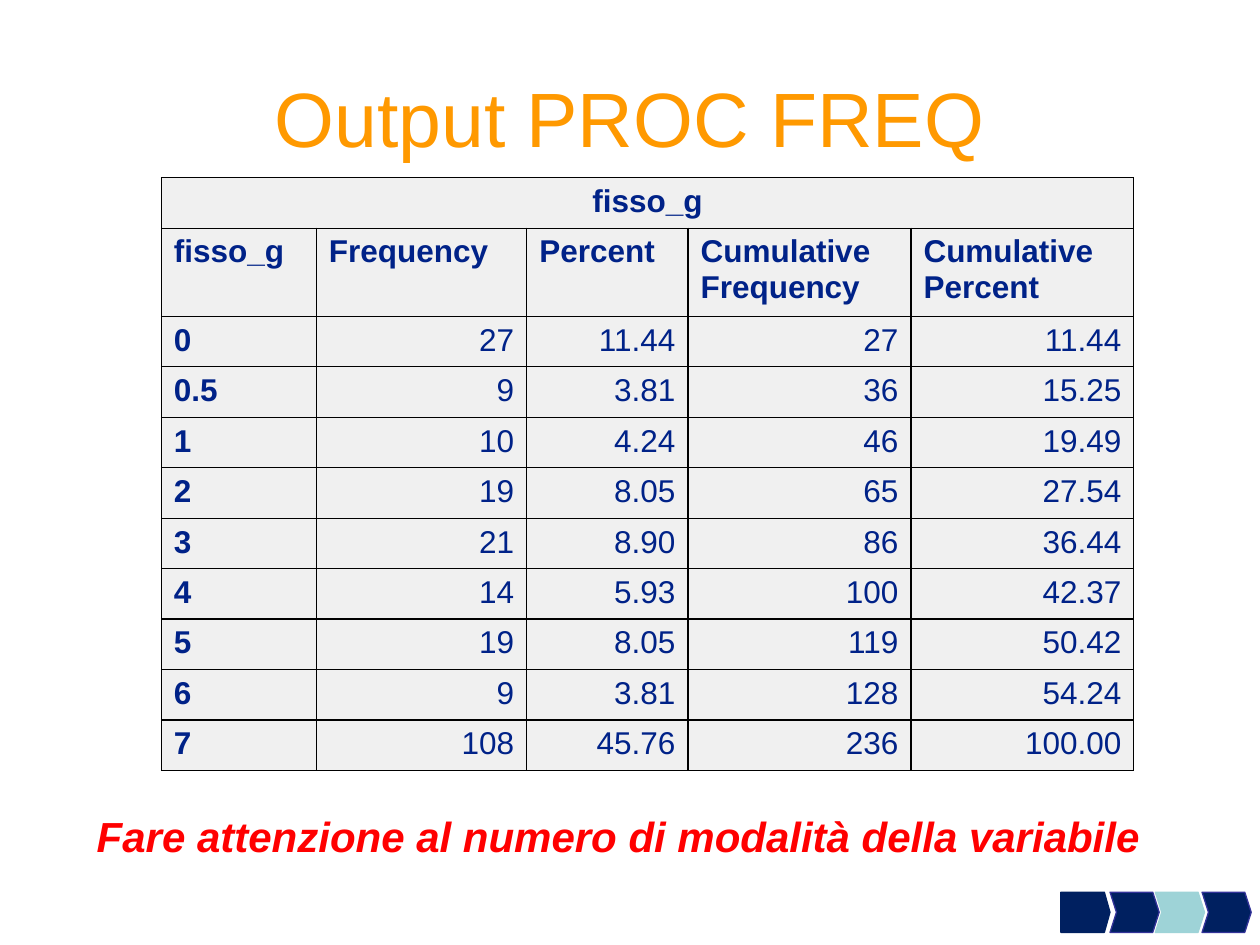
from lxml import etree
from pptx import Presentation
from pptx.dml.color import RGBColor
from pptx.enum.shapes import MSO_SHAPE as Shape
from pptx.enum.text import MSO_ANCHOR as Anchor, PP_ALIGN as Align
from pptx.oxml.ns import qn
from pptx.util import Pt

COLORS = {
    "title": "FF9900", "text": "002288", "cell": "F0F0F0", "border": "000000",
    "note": "FF0000", "navy": "002060", "indigo": "333399", "aqua": "9ED3D7",
}


class SlideBuilder:
    font_name = "Arial"

    def __init__(self, slide):
        self.slide = slide

    def color(self, name):
        return RGBColor.from_string(COLORS[name])

    def add_text(self, paragraph, text, size, color, bold=False, italic=False):
        for index, line in enumerate(text.split("\n")):
            if index:
                paragraph.add_line_break()
            run = paragraph.add_run()
            run.text = line
            font = run.font
            font.name, font.size = self.font_name, Pt(size)
            font.bold, font.italic = bold, italic
            font.color.rgb = self.color(color)

    def text_box(self, box, text, size, color, align=Align.LEFT,
                 anchor=Anchor.TOP, **style):
        frame = self.slide.shapes.add_textbox(*map(Pt, box)).text_frame
        frame.word_wrap = True
        frame.vertical_anchor = anchor
        paragraph = frame.paragraphs[0]
        paragraph.alignment = align
        self.add_text(paragraph, text, size, color, **style)
        return paragraph

    def border(self, cell, width=0.75):
        properties = cell._tc.get_or_add_tcPr()
        for side in ("lnL", "lnR", "lnT", "lnB"):
            line = etree.SubElement(properties, qn(f"a:{side}"), w=str(Pt(width)))
            fill = etree.SubElement(line, qn("a:solidFill"))
            etree.SubElement(fill, qn("a:srgbClr"), val=COLORS["border"])

    def cell(self, cell, text, align, bold):
        self.border(cell)
        cell.fill.solid()
        cell.fill.fore_color.rgb = self.color("cell")
        paragraph = cell.text_frame.paragraphs[0]
        paragraph.alignment = align
        if text:
            self.add_text(paragraph, text, 18, "text", bold=bold)

    def table(self, left, top, widths, heights, rows):
        table = self.slide.shapes.add_table(
            len(heights), len(widths), Pt(left), Pt(top),
            Pt(sum(widths)), Pt(sum(heights))).table
        for column, width in zip(table.columns, widths):
            column.width = Pt(width)
        for row, height in zip(table.rows, heights):
            row.height = Pt(height)
        table.cell(0, 0).merge(table.cell(0, len(widths) - 1))
        for r, values in enumerate(rows):
            for c, value in enumerate(values):
                is_number = r > 1 and c > 0
                align = (Align.CENTER if r == 0 else
                         Align.RIGHT if is_number else Align.LEFT)
                self.cell(table.cell(r, c), value, align, not is_number)

    def arrow(self, kind, box, adjustment, fill, line):
        shape = self.slide.shapes.add_shape(kind, *map(Pt, box))
        shape.shadow.inherit = False
        shape.adjustments[0] = adjustment
        shape.fill.solid()
        shape.fill.fore_color.rgb = self.color(fill)
        shape.line.color.rgb = self.color(line)
        shape.line.width = Pt(0.75)


def main():
    presentation = Presentation()
    presentation.slide_width, presentation.slide_height = Pt(720), Pt(540)
    builder = SlideBuilder(
        presentation.slides.add_slide(presentation.slide_layouts[6]))

    # Title
    builder.text_box((36, 21.6, 648, 90), "Output PROC FREQ", 44, "title",
                     Align.CENTER, Anchor.MIDDLE)

    # Frequency table
    rows = [
        ("fisso_g", "", "", "", ""),
        ("fisso_g", "Frequency", "Percent", "Cumulative\nFrequency",
         "Cumulative\nPercent"),
        ("0", "27", "11.44", "27", "11.44"),
        ("0.5", "9", "3.81", "36", "15.25"),
        ("1", "10", "4.24", "46", "19.49"),
        ("2", "19", "8.05", "65", "27.54"),
        ("3", "21", "8.90", "86", "36.44"),
        ("4", "14", "5.93", "100", "42.37"),
        ("5", "19", "8.05", "119", "50.42"),
        ("6", "9", "3.81", "128", "54.24"),
        ("7", "108", "45.76", "236", "100.00"),
    ]
    heights = [25.2, 43.9] + [25.2] * 9
    builder.table(92.2, 101.5, [88.6, 120.2, 92.2, 127.4, 127.4], heights, rows)

    # Closing note with a hanging indent
    note = builder.text_box(
        (48.2, 465.1, 648, 69.8),
        "Fare attenzione al numero di modalità della variabile",
        24, "note", bold=True, italic=True)
    note.line_spacing = 0.8
    properties = note._p.get_or_add_pPr()
    properties.set("marL", str(Pt(27)))
    properties.set("indent", str(Pt(-27)))

    # Arrow strip, from back to front
    for kind, left, adjustment, fill, line in (
            (Shape.CHEVRON, 660.2, 0.16, "aqua", "aqua"),
            (Shape.PENTAGON, 606.2, 0.14, "navy", "navy"),
            (Shape.CHEVRON, 634.3, 0.16, "navy", "indigo"),
            (Shape.CHEVRON, 686.9, 0.16, "navy", "indigo")):
        builder.arrow(kind, (left, 509.8, 28.1, 23), adjustment, fill, line)

    presentation.save("out.pptx")


if __name__ == "__main__":
    main()
